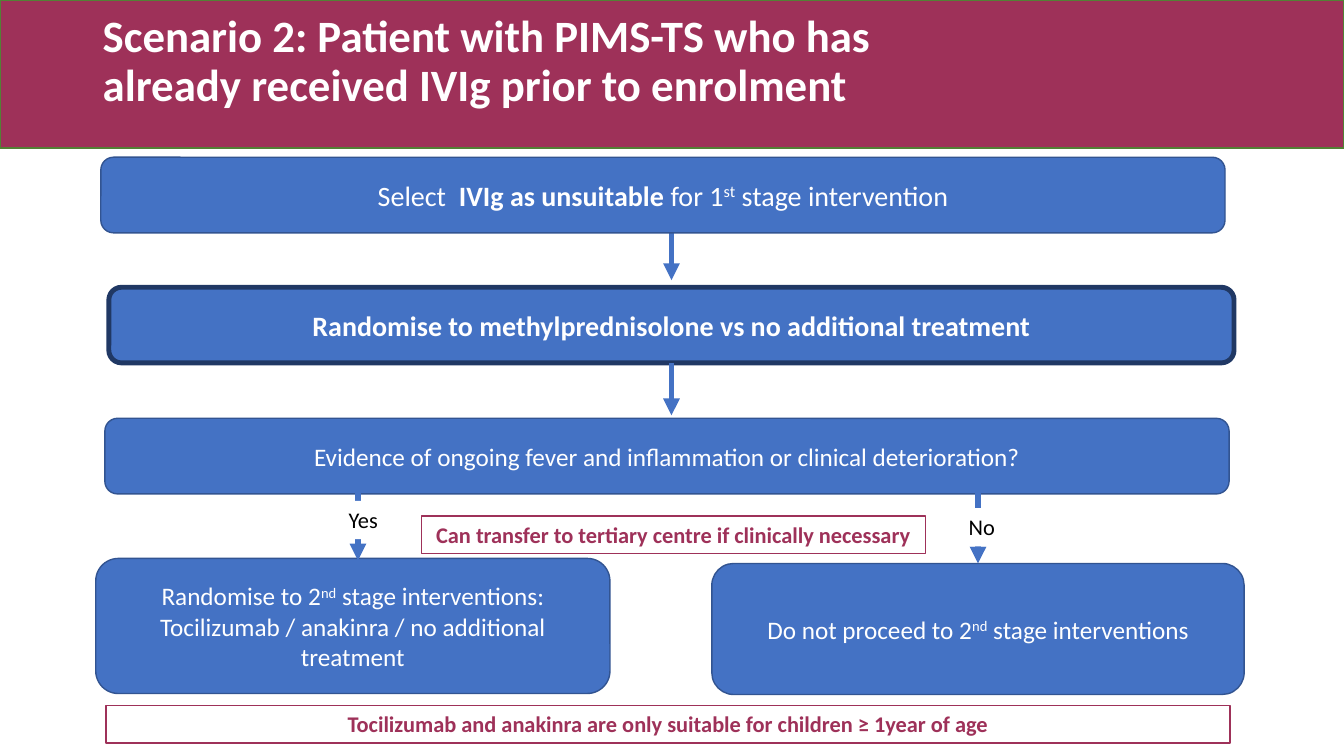
from lxml.etree import SubElement
from pptx import Presentation
from pptx.dml.color import RGBColor
from pptx.enum.shapes import MSO_CONNECTOR, MSO_SHAPE
from pptx.enum.text import MSO_ANCHOR, MSO_AUTO_SIZE, PP_ALIGN
from pptx.oxml.ns import qn
from pptx.util import Inches, Pt

WINE, BLUE, EDGE, NAVY = "9E3159", "4472C4", "325491", "203864"
GREEN, WHITE, BLACK = "538035", "FFFFFF", "000000"
BOLD, SUPER = {"bold": True}, {"super": True}


def color(code):
    return RGBColor.from_string(code)


class Chart:
    """Draws the parts of a flow chart on one slide in a shared style."""

    def __init__(self, slide, font="Calibri"):
        self.slide = slide
        self.font = font

    def text(self, shape, lines, size, ink, align=PP_ALIGN.CENTER,
             anchor=MSO_ANCHOR.MIDDLE, grow=False, space=1.0):
        frame = shape.text_frame
        fit = MSO_AUTO_SIZE.SHAPE_TO_FIT_TEXT if grow else MSO_AUTO_SIZE.NONE
        form = {"word_wrap": True, "vertical_anchor": anchor, "auto_size": fit}
        for name, value in form.items():
            setattr(frame, name, value)
        for index, line in enumerate(lines):
            para = frame.add_paragraph() if index else frame.paragraphs[0]
            para.alignment, para.line_spacing = align, space
            for words, style in line:
                run = para.add_run()
                run.text = words
                form = {"name": self.font, "size": Pt(size),
                        "bold": style.get("bold", False)}
                for name, value in form.items():
                    setattr(run.font, name, value)
                run.font.color.rgb = color(ink)
                if style.get("super"):
                    run.font._element.set("baseline", "30000")

    def shape(self, kind, place, fill=None, edge=None, width=1):
        shape = self.slide.shapes.add_shape(kind, *map(Inches, place))
        shape.shadow.inherit = False
        if fill:
            shape.fill.solid()
            shape.fill.fore_color.rgb = color(fill)
        else:
            shape.fill.background()
        if edge:
            shape.line.color.rgb = color(edge)
            shape.line.width = Pt(width)
        else:
            shape.line.fill.background()
        return shape

    def title(self, place, words):
        box = self.slide.shapes.add_textbox(*map(Inches, place))
        self.text(box, [[(words, BOLD)]], 32, WHITE, PP_ALIGN.LEFT, space=0.9)

    def step(self, place, lines, size=18, edge=EDGE, width=1):
        box = self.shape(MSO_SHAPE.ROUNDED_RECTANGLE, place, BLUE, edge, width)
        self.text(box, lines, size, WHITE)
        return box

    def label(self, left, top, words):
        box = self.shape(MSO_SHAPE.RECTANGLE, (left, top, 0.67, 0.38), WHITE)
        self.text(box, [[(words, {})]], 16, BLACK, PP_ALIGN.LEFT,
                  MSO_ANCHOR.TOP, True)

    def note(self, place, words):
        box = self.shape(MSO_SHAPE.RECTANGLE, place, edge=WINE)
        self.text(box, [[(words, BOLD)]], 16, WINE,
                  anchor=MSO_ANCHOR.TOP, grow=True)

    def arrow(self, left, top, end, start=None, goal=None):
        ends = map(Inches, (left, top, left, end))
        link = self.slide.shapes.add_connector(MSO_CONNECTOR.STRAIGHT, *ends)
        link.line.color.rgb = color(BLUE)
        link.line.width = Pt(4)
        props = link._element.spPr
        SubElement(props.find(qn("a:ln")), qn("a:tailEnd"), type="triangle")
        SubElement(props, qn("a:effectLst"))
        if start:
            link.begin_connect(start, 2)
        if goal:
            link.end_connect(goal, 0)


def main():
    deck = Presentation()
    deck.slide_width, deck.slide_height = Inches(13.33), Inches(7.5)
    chart = Chart(deck.slides.add_slide(deck.slide_layouts[6]))

    chart.shape(MSO_SHAPE.RECTANGLE, (0, 0, 13.33, 1.47), WINE, GREEN)
    chart.title((0.92, 0.02, 8.91, 1.2), "Scenario 2: Patient with PIMS-TS who "
                "has already received IVIg prior to enrolment")

    chart.arrow(6.66, 2.27, 2.78)
    chart.step((1, 1.56, 11.15, 0.75), [[
        ("Select  ", {}), ("IVIg as unsuitable ", BOLD), ("for 1", {}),
        ("st", SUPER), (" stage intervention", {})]], 20)
    trial = chart.step((1.08, 2.85, 11.16, 0.75), [[
        ("Randomise to methylprednisolone vs no additional treatment", BOLD)]],
        20, NAVY, 3.5)
    chart.arrow(6.66, 3.6, 4.12, start=trial)
    chart.step((1.04, 4.15, 11.15, 0.75), [[
        ("Evidence of ongoing fever and inflammation or clinical "
         "deterioration?", {})]])
    chart.step((0.95, 5.54, 5.1, 1.34), [
        [("Randomise to 2", {}), ("nd", SUPER), (" stage interventions:", {})],
        [("Tocilizumab / anakinra / no additional treatment", {})]])
    stop = chart.step((7.06, 5.59, 5.28, 1.3), [[
        ("Do not proceed to 2", {}), ("nd", SUPER),
        (" stage interventions", {})]])

    chart.arrow(3.55, 4.78, 5.56)
    chart.label(3.36, 4.97, "Yes")
    chart.arrow(9.7, 4.83, 5.59, goal=stop)
    chart.label(9.51, 5.04, "No")

    chart.note((4.18, 5.12, 5, 0.37),
               "Can transfer to tertiary centre if clinically necessary")
    chart.note((1.05, 7, 11.15, 0.37), "Tocilizumab and anakinra are only "
               "suitable for children ≥ 1year of age")
    deck.save("out.pptx")


if __name__ == "__main__":
    main()
